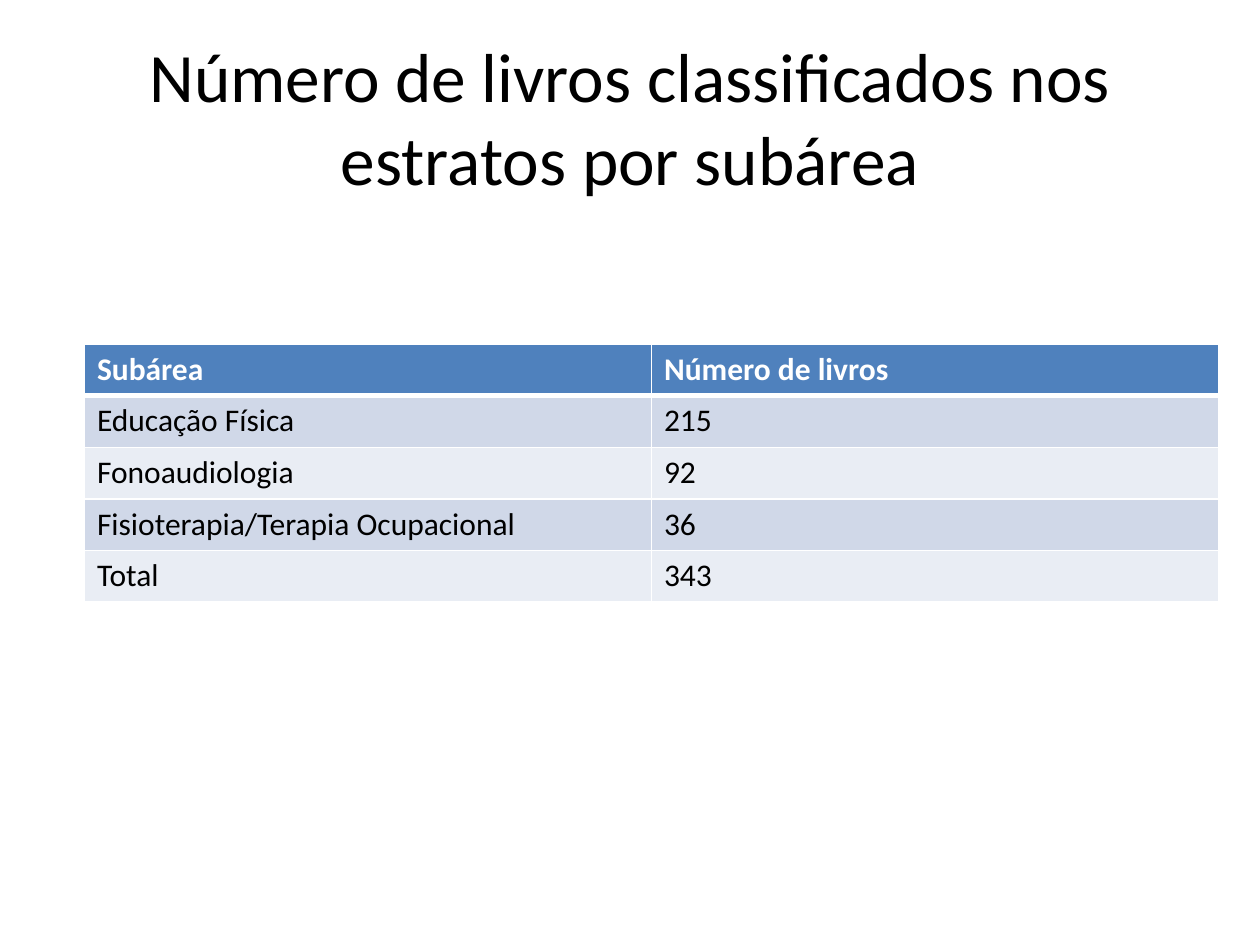
from dataclasses import dataclass

from lxml.etree import SubElement
from pptx import Presentation
from pptx.dml.color import RGBColor as Color
from pptx.enum.text import MSO_ANCHOR as Anchor, PP_ALIGN as Align
from pptx.oxml.ns import qn
from pptx.util import Inches, Pt

# Content
TITLE = "Número de livros classificados nos estratos por subárea"
ROWS = [
    ("Subárea", "Número de livros"),
    ("Educação Física", "215"),
    ("Fonoaudiologia", "92"),
    ("Fisioterapia/Terapia Ocupacional", "36"),
    ("Total", "343"),
]


@dataclass(frozen=True)
class Theme:
    font: str = "Calibri"
    title_size: float = 39.6
    cell_size: float = 18
    text: str = "000000"
    light: str = "FFFFFF"
    header: str = "4F81BD"
    bands: tuple = ("D0D8E8", "E9EDF4")
    line: float = 1
    header_line: float = 3


THEME = Theme()


def write(frame, text, *, size, color=THEME.text, bold=False, align=Align.LEFT):
    para = frame.paragraphs[0]
    para.alignment = align
    span = para.add_run()
    span.text = text
    span.font.name = THEME.font
    span.font.size = Pt(size)
    span.font.bold = bold
    span.font.color.rgb = Color.from_string(color)


def set_borders(cell, widths):
    properties = cell._tc.get_or_add_tcPr()
    for side, width in widths.items():
        line = SubElement(properties, qn(f"a:ln{side}"), w=str(Pt(width)))
        fill = SubElement(line, qn("a:solidFill"))
        SubElement(fill, qn("a:srgbClr"), val=THEME.light)


deck = Presentation()
deck.slide_width, deck.slide_height = Inches(10), Inches(7.5)
page = deck.slides.add_slide(deck.slide_layouts[6])

# Title
box = page.shapes.add_textbox(Inches(0.5), Inches(0.3), Inches(9), Inches(1.25))
box.text_frame.word_wrap = True
box.text_frame.vertical_anchor = Anchor.MIDDLE
write(box.text_frame, TITLE, size=THEME.title_size, align=Align.CENTER)

# Table of books by subarea
row_height = 0.41
table = page.shapes.add_table(
    len(ROWS), len(ROWS[0]), Inches(0.67), Inches(2.73),
    Inches(9), Inches(row_height * len(ROWS)),
).table

for row_index, row in enumerate(ROWS):
    is_header = row_index == 0
    fill = THEME.header if is_header else THEME.bands[(row_index - 1) % 2]
    top = THEME.header_line if row_index == 1 else THEME.line
    bottom = THEME.header_line if is_header else THEME.line
    for column_index, text in enumerate(row):
        cell = table.cell(row_index, column_index)
        set_borders(cell, {"L": THEME.line, "R": THEME.line, "T": top, "B": bottom})
        cell.fill.solid()
        cell.fill.fore_color.rgb = Color.from_string(fill)
        write(cell.text_frame, text, size=THEME.cell_size, bold=is_header,
              color=THEME.light if is_header else THEME.text)

deck.save("out.pptx")
